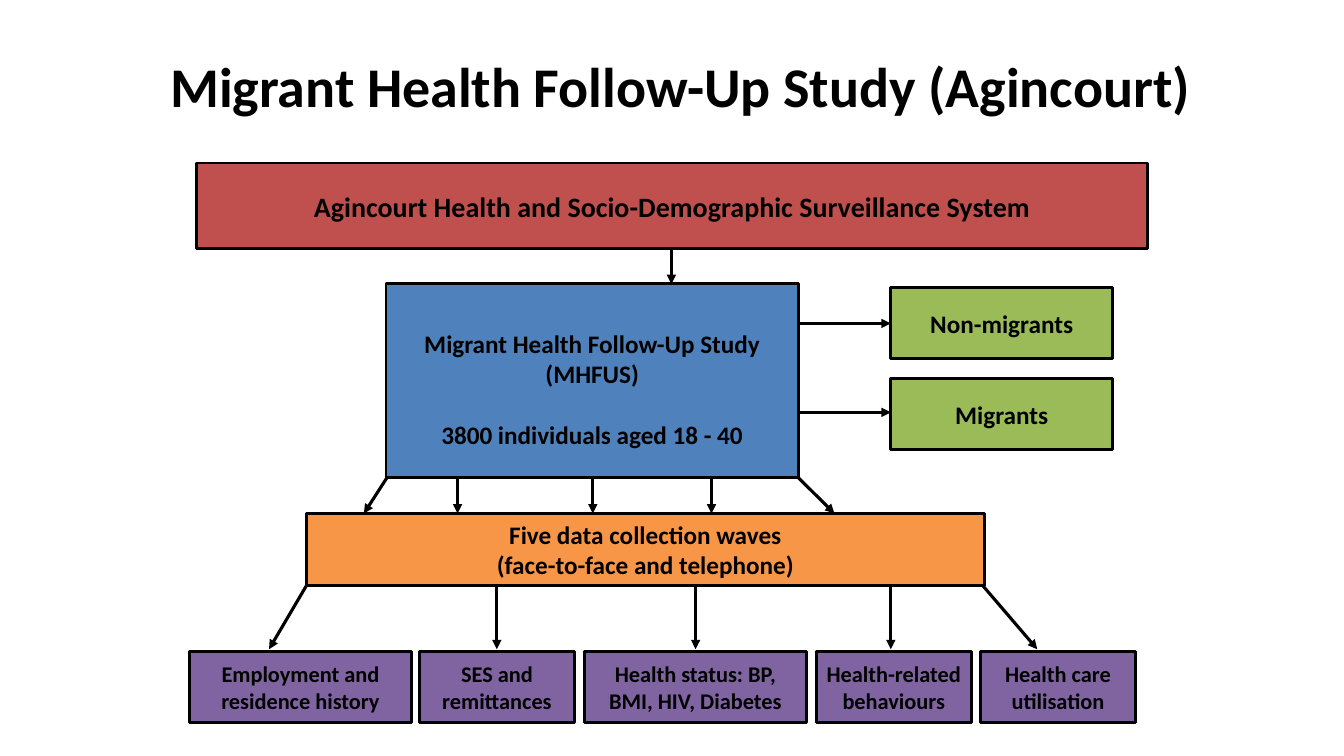
from dataclasses import dataclass

import pptx
import pptx.dml.color
import pptx.enum.shapes
import pptx.enum.text
import pptx.oxml
import pptx.oxml.ns
import pptx.util

Cm = pptx.util.Cm
Pt = pptx.util.Pt

BLACK = "000000"
RED, BLUE, GREEN, ORANGE, PURPLE = "C0504D", "4F81BD", "9BBB59", "F79646", "8064A2"
ROW_H = 1.8
WIDE, NARROW = 5.59, 3.91
FONT = {"name": "Calibri", "bold": True}
FRAME = {"word_wrap": True, "vertical_anchor": pptx.enum.text.MSO_ANCHOR.MIDDLE}


@dataclass
class Box:
    """A labelled rectangle; lengths in cm, size and gap in points."""
    left: float
    top: float
    width: float
    height: float
    lines: tuple[str, ...]
    size: int = 18
    fill: str | None = None
    gap: float = 0
    inset_top: float = 0.13


@dataclass
class Arrow:
    x1: float
    y1: float
    x2: float
    y2: float


def rgb(value: str) -> pptx.dml.color.RGBColor:
    return pptx.dml.color.RGBColor.from_string(value)


def write(tf, box: Box) -> None:
    for name, value in {**FRAME, "margin_top": Cm(box.inset_top)}.items():
        setattr(tf, name, value)
    for i, line in enumerate(box.lines):
        p = tf.add_paragraph() if i else tf.paragraphs[0]
        p.alignment = pptx.enum.text.PP_ALIGN.CENTER
        if i:
            p.space_before = Pt(box.gap)
        r = p.add_run()
        r.text = line
        for name, value in {**FONT, "size": Pt(box.size)}.items():
            setattr(r.font, name, value)
        r.font.color.rgb = rgb(BLACK)


def draw_box(s, box: Box) -> None:
    place = [Cm(v) for v in (box.left, box.top, box.width, box.height)]
    if box.fill is None:
        sp = s.shapes.add_textbox(*place)
    else:
        sp = s.shapes.add_shape(pptx.enum.shapes.MSO_SHAPE.RECTANGLE, *place)
        sp.shadow.inherit = False
        sp.fill.solid()
        sp.fill.fore_color.rgb = rgb(box.fill)
        sp.line.color.rgb = rgb(BLACK)
        sp.line.width = Pt(2)
    write(sp.text_frame, box)


def draw_arrow(s, arrow: Arrow) -> None:
    ends = [Cm(v) for v in (arrow.x1, arrow.y1, arrow.x2, arrow.y2)]
    sp = s.shapes.add_connector(pptx.enum.shapes.MSO_CONNECTOR.STRAIGHT, *ends)
    sp.line.color.rgb = rgb(BLACK)
    sp.line.width = Pt(2.25)
    ns = pptx.oxml.ns.nsdecls("a")
    sp.line._get_or_add_ln().append(pptx.oxml.parse_xml(f'<a:tailEnd {ns} type="triangle"/>'))
    sp._element.spPr.append(pptx.oxml.parse_xml(f"<a:effectLst {ns}/>"))


TOPICS = [
    (4.78, WIDE, "Employment and residence history"),
    (10.57, NARROW, "SES and remittances"),
    (14.73, WIDE, "Health status: BP, BMI, HIV, Diabetes"),
    (20.57, NARROW, "Health-related behaviours"),
    (24.71, NARROW, "Health care utilisation"),
]
BOXES = [
    Box(3.99, 0.56, 26.31, 3.18, ("Migrant Health Follow-Up Study (Agincourt)",), 40),
    Box(4.95, 4.11, 23.98, 2.16,
        ("Agincourt Health and Socio-Demographic Surveillance System",), 20, RED),
    Box(9.73, 7.14, 10.39, 4.9,
        ("Migrant Health Follow-Up Study (MHFUS)", "3800 individuals aged 18 - 40"),
        fill=BLUE, gap=22, inset_top=0.53),
    Box(22.45, 7.24, WIDE, ROW_H, ("Non-migrants",), fill=GREEN),
    Box(22.45, 9.53, WIDE, ROW_H, ("Migrants",), fill=GREEN),
    Box(7.72, 12.95, 17.09, ROW_H,
        ("Five data collection waves", "(face-to-face and telephone)"), fill=ORANGE),
    *(Box(x, 16.41, w, ROW_H, (text,), 16, PURPLE) for x, w, text in TOPICS),
]

WAVE_XS = [(9.75, 9.17), (11.53, 11.53), (14.94, 14.94), (17.93, 17.93), (20.12, 21.03)]
TOPIC_XS = [(7.72, 6.78), (12.52, 12.52), (17.53, 17.53), (22.45, 22.45), (24.77, 26.14)]
ARROWS = [
    Arrow(16.92, 6.27, 16.92, 7.16),
    *(Arrow(20.12, y, 22.45, y) for y in (8.15, 10.39)),
    *(Arrow(x1, 12.04, x2, 12.94) for x1, x2 in WAVE_XS),
    *(Arrow(x1, 14.76, x2, 16.36) for x1, x2 in TOPIC_XS),
]


def main() -> None:
    prs = pptx.Presentation()
    prs.slide_width, prs.slide_height = Cm(33.87), Cm(19.05)
    s = prs.slides.add_slide(prs.slide_layouts[6])
    for box in BOXES:
        draw_box(s, box)
    for arrow in ARROWS:
        draw_arrow(s, arrow)
    prs.save("out.pptx")


if __name__ == "__main__":
    main()
